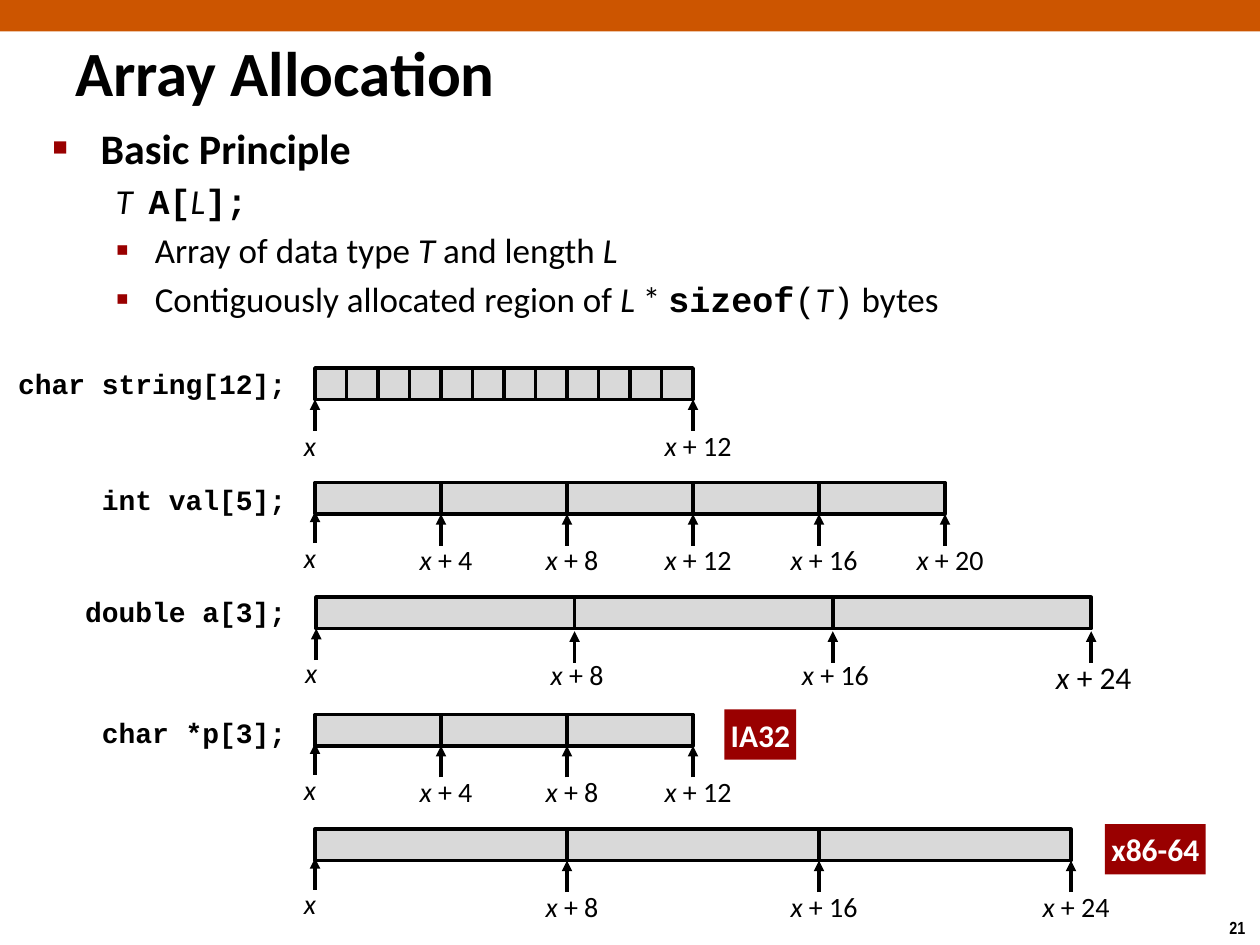
import dataclasses

import pptx
import pptx.dml.color
import pptx.enum.shapes
import pptx.enum.text
import pptx.oxml
import pptx.oxml.ns
import pptx.util
from pptx.util import Inches

RECT = pptx.enum.shapes.MSO_SHAPE.RECTANGLE
ALIGN = pptx.enum.text.PP_ALIGN
ANCHOR = pptx.enum.text.MSO_ANCHOR


@dataclasses.dataclass(frozen=True)
class Theme:
    bar: str = "CC5500"
    accent: str = "990000"
    cell: str = "D9D9D9"
    ink: str = "000000"
    paper: str = "FFFFFF"
    sans: str = "Calibri"
    mono: str = "Courier New"
    narrow: str = "Arial Narrow"
    title: int = 36
    heading: int = 24
    body: int = 20
    badge: int = 18
    label: int = 16
    number: int = 10
    line: int = 2


T = Theme()


@dataclasses.dataclass
class ArrayRow:
    code: str
    code_top: float
    top: float
    cells: int
    cell_width: float
    cell_bytes: int
    left: float = 2.5
    tick_every: int = 1
    first_lift: float = 0.02
    arrow_gap: float = 0
    last_size: int = T.label


ROWS = [
    ArrayRow("char string[12];", 2.86, 2.92, 12, 0.25, 1, tick_every=12, first_lift=0),
    ArrayRow("int val[5];", 3.78, 3.83, 5, 1, 4),
    ArrayRow("double a[3];", 4.67, 4.74, 3, 2.05, 8, left=2.51, arrow_gap=0.02,
             last_size=T.badge),
    ArrayRow("char *p[3];", 5.63, 5.67, 3, 1, 4),
    ArrayRow("", 0, 6.58, 3, 2, 8),
]

# Style flags of a run: b bold, i italic, m monospaced
BODY = [
    ("■", 60, [("Basic Principle", "b")]),
    (None, 0, [("T  ", "i"), ("A[", "mb"), ("L", "i"), ("];", "mb")]),
    ("▪", 110, [("Array of data type ", ""), ("T", "i"), (" and length ", ""), ("L", "i")]),
    ("▪", 110, [("Contiguously allocated region of ", ""), ("L", "i"), (" * ", ""),
                ("sizeof", "mb"), ("(", "m"), ("T", "i"), (")", "m"), (" bytes", "")]),
]


def rgb(color):
    return pptx.dml.color.RGBColor.from_string(color)


def add_runs(p, parts, size, color=T.ink, font=T.sans):
    for text, style in parts:
        r = p.add_run()
        r.text = text
        r.font.size = pptx.util.Pt(size)
        r.font.name = T.mono if "m" in style else font
        r.font.bold = "b" in style
        r.font.italic = "i" in style
        r.font.color.rgb = rgb(color)


def add_text(shapes, box, parts, size, align=ALIGN.LEFT, font=T.sans, wrap=True):
    sp = shapes.add_textbox(*map(Inches, box))
    tf = sp.text_frame
    tf.word_wrap = wrap
    p = tf.paragraphs[0]
    p.alignment = align
    add_runs(p, parts, size, font=font)
    return sp


def add_rect(shapes, box, fill, line=None):
    sp = shapes.add_shape(RECT, *map(Inches, box))
    sp.shadow.inherit = False
    sp.fill.solid()
    sp.fill.fore_color.rgb = rgb(fill)
    if line:
        sp.line.color.rgb = rgb(line)
        sp.line.width = pptx.util.Pt(T.line)
    else:
        sp.line.fill.background()
    return sp


def add_up_arrow(shapes, x, tip, length=0.25):
    c = shapes.add_connector(pptx.enum.shapes.MSO_CONNECTOR.STRAIGHT,
                             Inches(x), Inches(tip + length), Inches(x), Inches(tip))
    c.line.color.rgb = rgb(T.ink)
    c.line.width = pptx.util.Pt(T.line)
    add_child(c.line._get_or_add_ln(), "tailEnd", type="triangle")
    add_child(c._element.spPr, "effectLst")


def add_child(parent, tag, **attributes):
    child = parent.makeelement(pptx.oxml.ns.qn("a:" + tag), attributes)
    parent.append(child)
    return child


def set_indent(p, margin, hanging, bullet, percent):
    pPr = p._p.get_or_add_pPr()
    pPr.set("marL", str(Inches(margin)))
    pPr.set("indent", str(-Inches(hanging)))
    if bullet:
        add_child(add_child(pPr, "buClr"), "srgbClr", val=T.accent)
        add_child(pPr, "buSzPct", val=str(percent * 1000))
        add_child(pPr, "buFont", typeface="Arial")
        add_child(pPr, "buChar", char=bullet)
    else:
        add_child(pPr, "buNone")


def add_header(s, box):
    left, top, width, height = box
    add_rect(s.shapes, box, T.bar)
    sp = add_text(s.shapes, (left + 0.5, top + height, 6.5, 0.63),
                  [("Array Allocation", "b")], T.title)
    sp.text_frame.vertical_anchor = ANCHOR.MIDDLE


def add_body(s, box):
    sp = s.shapes.add_textbox(*map(Inches, box))
    tf = sp.text_frame
    tf.word_wrap = True
    for i, (bullet, percent, parts) in enumerate(BODY):
        p = tf.add_paragraph() if i else tf.paragraphs[0]
        size = T.body if i else T.heading
        p.level = 1 if i else 0
        p.space_before = pptx.util.Pt(0.2 * size)
        margin, hanging = (0.81, 0.31) if i else (0.38, 0.38)
        set_indent(p, margin, hanging, bullet, percent)
        add_runs(p, parts, size)


def add_array(s, row):
    """Draw the declaration, its cells and the marked byte addresses."""
    if row.code:
        add_text(s.shapes, (0.03, row.code_top, 2.34, 0.37), [(row.code, "mb")],
                 T.label, ALIGN.RIGHT)
    shapes = s.shapes.add_group_shape().shapes
    height = 0.25
    for i in range(row.cells):
        add_rect(shapes, (row.left + i * row.cell_width, row.top, row.cell_width, height),
                 T.cell, T.ink)
    for i in range(0, row.cells + 1, row.tick_every):
        x = row.left + i * row.cell_width
        lift = 0 if i else row.first_lift
        gap = row.arrow_gap
        add_up_arrow(shapes, x, row.top + height + gap - lift)
        parts = [("x ", "i"), (f"+ {i * row.cell_bytes}", "")] if i else [("x", "i")]
        width, shift = (1.08, 0.04 - gap) if i else (0.43, -0.04)
        size = row.last_size if i == row.cells else T.label
        add_text(shapes, (x + shift - width / 2, row.top + 0.43 - lift, width, 0.37),
                 parts, size, ALIGN.CENTER)


def add_badge(s, box, text):
    sp = add_rect(s.shapes, box, T.accent)
    tf = sp.text_frame
    tf.margin_left = tf.margin_right = tf.margin_top = tf.margin_bottom = Inches(0.05)
    tf.word_wrap = False
    tf.vertical_anchor = ANCHOR.TOP
    p = tf.paragraphs[0]
    p.alignment = ALIGN.CENTER
    add_runs(p, [(text, "b")], T.badge, T.paper)


def main():
    prs = pptx.Presentation()
    prs.slide_width, prs.slide_height = Inches(10), Inches(7.5)
    s = prs.slides.add_slide(prs.slide_layouts[6])
    add_header(s, (0, 0, 10, 0.25))
    add_text(s.shapes, (9.66, 7.23, 0.34, 0.27), [("21", "b")], T.number,
             font=T.narrow, wrap=False)
    add_body(s, (0.32, 0.92, 9.09, 1.77))
    for row in ROWS:
        add_array(s, row)
    add_badge(s, (5.75, 5.63, 0.57, 0.4), "IA32")
    add_badge(s, (8.77, 6.54, 0.8, 0.4), "x86-64")
    prs.save("out.pptx")


if __name__ == "__main__":
    main()
